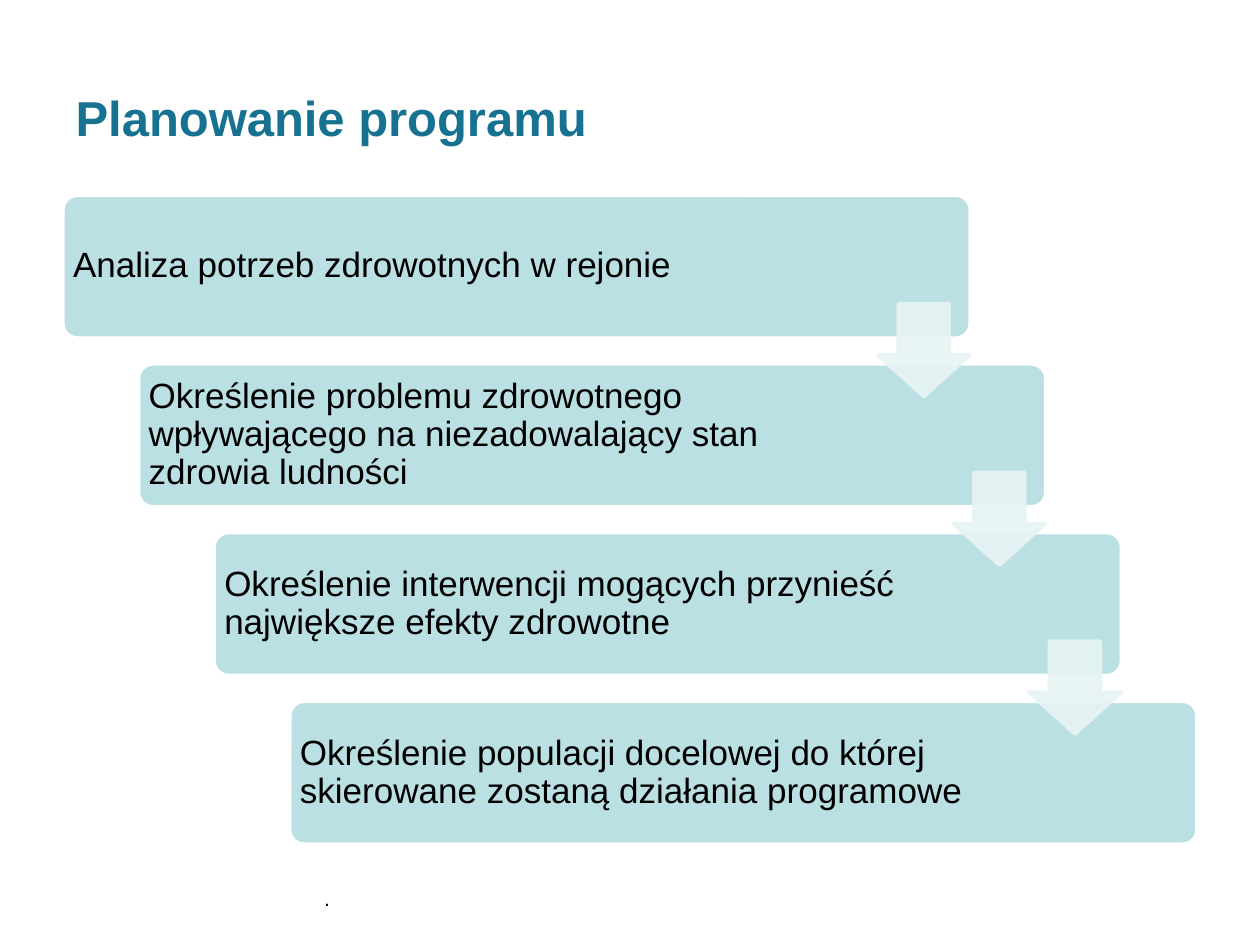
import pptx
import pptx.util
import pptx.dml.color
import pptx.enum.shapes
import pptx.enum.text
import pptx.oxml
import pptx.oxml.ns

Inches, Pt = pptx.util.Inches, pptx.util.Pt
RGBColor = pptx.dml.color.RGBColor
SHAPE = pptx.enum.shapes.MSO_SHAPE
ALIGN = pptx.enum.text.PP_ALIGN
ANCHOR = pptx.enum.text.MSO_ANCHOR

TEAL = RGBColor(0x17, 0x72, 0x91)
STEP_FILL = RGBColor(0xBB, 0xE0, 0xE3)
ARROW_FILL = RGBColor(0xE7, 0xF3, 0xF4)
WHITE = RGBColor(0xFF, 0xFF, 0xFF)
BLACK = RGBColor(0, 0, 0)

STEPS = [
    "Analiza potrzeb zdrowotnych w rejonie",
    "Określenie problemu zdrowotnego wpływającego na niezadowalający stan zdrowia ludności",
    "Określenie interwencji mogących przynieść największe efekty zdrowotne",
    "Określenie populacji docelowej do której skierowane zostaną działania programowe",
]


def write(tf, text, size, color, align=ALIGN.LEFT, bold=False):
    tf.word_wrap = True
    tf.text = text
    p = tf.paragraphs[0]
    p.alignment = align
    font = p.runs[0].font
    font.name, font.size, font.bold = "Arial", Pt(size), bold
    font.color.rgb = color
    return p


def add_block(s, kind, box, adjustments, fill, line):
    sp = s.shapes.add_shape(kind, *box)
    sp.shadow.inherit = False
    for i, value in enumerate(adjustments):
        sp.adjustments[i] = value
    sp.fill.solid()
    sp.fill.fore_color.rgb = fill
    sp.line.color.rgb = line
    sp.line.width = Pt(2)
    return sp


def set_opacity(sp, percent):
    """Apply one opacity to the fill and the line."""
    for color in sp._element.spPr.iter(pptx.oxml.ns.qn("a:srgbClr")):
        alpha = pptx.oxml.parse_xml(
            f'<a:alpha {pptx.oxml.ns.nsdecls("a")} val="{percent * 1000}"/>')
        color.append(alpha)


def add_title(s, text, left, top, width, height):
    sp = s.shapes.title
    sp.left, sp.top, sp.width, sp.height = left, top, width, height
    write(sp.text_frame, text, 28, TEAL, bold=True)
    sp.text_frame.vertical_anchor = ANCHOR.MIDDLE


def add_step(s, text, left, top, width, height):
    add_block(s, SHAPE.ROUNDED_RECTANGLE, (left, top, width, height),
              [0.1], STEP_FILL, WHITE)
    # The text stops short of the arrows
    tf = s.shapes.add_textbox(left, top, int(width * 0.815), height).text_frame
    tf.margin_left = tf.margin_right = tf.margin_top = tf.margin_bottom = Inches(0.08)
    tf.vertical_anchor = ANCHOR.MIDDLE
    write(tf, text, 20, BLACK).line_spacing = 0.9


def add_staircase(s, steps, left, top, width, height):
    """Equal steps from the top left to the bottom right, joined by arrows."""
    step_w, step_h = int(width * 0.8), int(height * 0.22)
    dx = (width - step_w) // (len(steps) - 1)
    dy = (height - step_h) // (len(steps) - 1)
    for i, text in enumerate(steps):
        add_step(s, text, left + i * dx, top + i * dy, step_w, step_h)

    # Each arrow ends flush with the right edge of the step it leaves
    size = int(step_h * 0.65)
    for i in range(len(steps) - 1):
        box = (left + i * dx + step_w - size, top + i * dy + int(step_h * 0.76), size, size)
        # python-pptx lists the shaft width first, then the head length
        arrow = add_block(s, SHAPE.DOWN_ARROW, box, [0.55, 0.45], ARROW_FILL, ARROW_FILL)
        set_opacity(arrow, 90)


def add_footer(s, text, left, top, width, height):
    tf = s.shapes.add_textbox(left, top, width, height).text_frame
    write(tf, text, 12, BLACK, ALIGN.CENTER)


def main():
    prs = pptx.Presentation()
    prs.slide_width, prs.slide_height = Inches(10), Inches(7.5)
    s = prs.slides.add_slide(prs.slide_layouts[5])  # Title Only
    add_footer(s, ".", Inches(0.35), Inches(6.98), Inches(4.49), Inches(0.29))
    add_staircase(s, STEPS, Inches(0.5), Inches(1.55), Inches(9), Inches(5.15))
    add_title(s, "Planowanie programu", Inches(0.5), Inches(0.3), Inches(7.81), Inches(1.25))
    prs.save("out.pptx")


if __name__ == "__main__":
    main()
